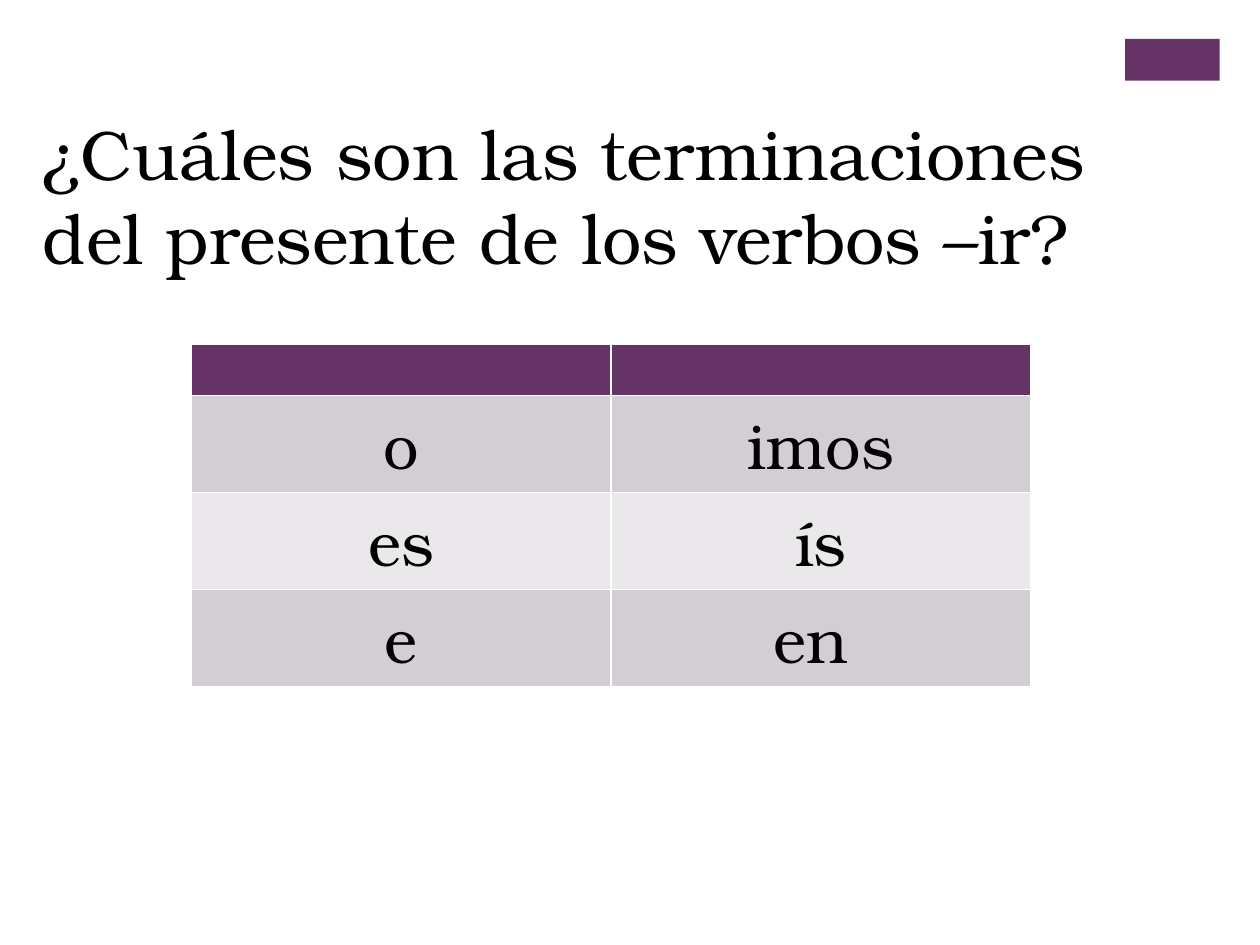
from pptx import Presentation
from pptx.dml.color import RGBColor
from pptx.enum.shapes import MSO_SHAPE
from pptx.enum.text import MSO_ANCHOR, PP_ALIGN
from pptx.util import Inches, Pt

# Content
TITLE = "¿Cuáles son las terminaciones del presente de los verbos –ir?"
ENDINGS = [
    ("", ""),
    ("o", "imos"),
    ("es", "ís"),
    ("e", "en "),
]

# Format values
PURPLE, BLACK = "663366", "000000"
BANDS = ["D3CED3", "EAE8EA"]
TITLE_FONT = {"name": "TeX Gyre Bonum", "size": Pt(40), "bold": False}
CELL_FONT = {"name": "TeX Gyre Bonum", "size": Pt(36), "bold": False}
HEADER_HEIGHT, ROW_HEIGHT, COLUMN_WIDTH = 0.41, 0.7, 3.33


def paint(fill, color):
    fill.solid()
    fill.fore_color.rgb = RGBColor.from_string(color)


def write(frame, text, font, alignment):
    para = frame.paragraphs[0]
    para.alignment = alignment
    span = para.add_run()
    span.text = text
    for name, value in font.items():
        setattr(span.font, name, value)
    span.font.color.rgb = RGBColor.from_string(BLACK)


deck = Presentation()
deck.slide_width, deck.slide_height = Inches(10), Inches(7.5)
page = deck.slides.add_slide(deck.slide_layouts[5])

# Corner block
corner = page.shapes.add_shape(
    MSO_SHAPE.RECTANGLE, Inches(8.93), Inches(0.31), Inches(0.75), Inches(0.33))
corner.shadow.inherit = False
paint(corner.fill, PURPLE)
corner.line.fill.background()

# Title
title = page.shapes.title
title.left, title.top = Inches(0.24), Inches(0.83)
title.width, title.height = Inches(9.4), Inches(1.45)
title.text_frame.word_wrap = True
title.text_frame.vertical_anchor = MSO_ANCHOR.TOP
write(title.text_frame, TITLE, TITLE_FONT, PP_ALIGN.LEFT)

# Table of endings; its style draws the white borders
heights = [HEADER_HEIGHT] + [ROW_HEIGHT] * (len(ENDINGS) - 1)
table = page.shapes.add_table(
    len(ENDINGS), 2, Inches(1.52), Inches(2.73),
    Inches(2 * COLUMN_WIDTH), Inches(sum(heights))).table
for column in table.columns:
    column.width = Inches(COLUMN_WIDTH)
for index, (endings, height) in enumerate(zip(ENDINGS, heights)):
    table.rows[index].height = Inches(height)
    for column, ending in enumerate(endings):
        cell = table.cell(index, column)
        paint(cell.fill, BANDS[(index - 1) % 2] if index else PURPLE)
        if ending:
            write(cell.text_frame, ending, CELL_FONT, PP_ALIGN.CENTER)

deck.save("out.pptx")
